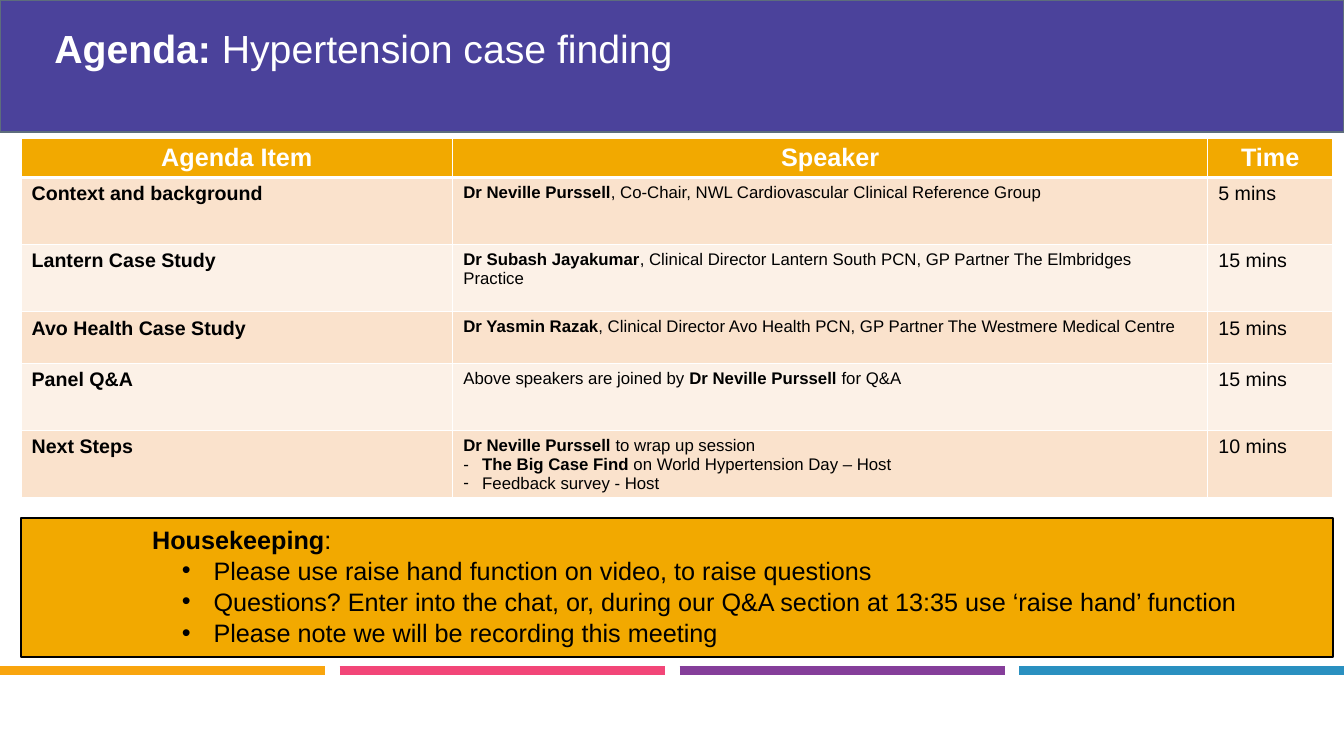
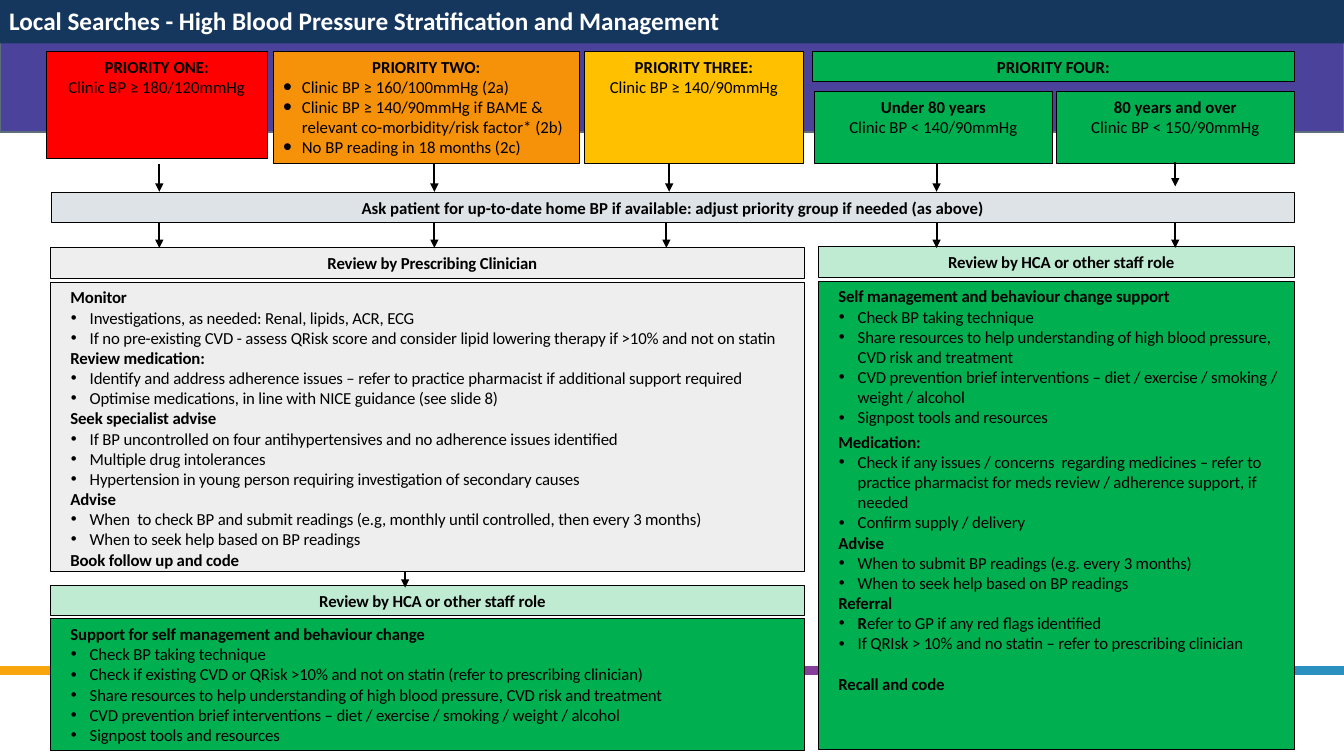
from lxml import etree
from pptx import Presentation
from pptx.dml.color import RGBColor
from pptx.enum import shapes, text
from pptx.oxml import ns
from pptx.util import Pt

C = {
    "white": "FFFFFF", "black": "000000", "purple": "4B429B", "slate": "5D6D7C",
    "navy": "15375D", "gold": "F2A900", "peach": "FAE2CC", "cream": "FCF1E7",
    "red": "FF0000", "orange": "F6910A", "amber": "FFC000", "green": "00B050",
    "steel": "7E93A7", "grey": "BFBFBF",
}
STRIPES = ["F9A50E", "F24678", "853E9A", "2A90C0"]
LEFT, CENTER = text.PP_ALIGN.LEFT, text.PP_ALIGN.CENTER


def write(tf, lines, size, font="Arial", color="black", align=LEFT, head=0,
          marker=(21, 13.5, 100), gaps={}, spacing=None, tight=False):
    """Fill a frame; text between bars is bold, "• " or "- " starts a list item."""
    tf.word_wrap = True
    tf.vertical_anchor = text.MSO_ANCHOR.TOP
    for i, line in enumerate(lines):
        p = tf.paragraphs[0] if i == 0 else tf.add_paragraph()
        pPr = p._p.get_or_add_pPr()
        item = line[:2] in ("• ", "- ")
        margin, hang, scale = marker if item else (head, 0, 100)
        pPr.set("marL", str(int(Pt(margin))))
        pPr.set("indent", str(-int(Pt(hang))))
        if item:
            etree.SubElement(pPr, ns.qn("a:buSzPct")).set("val", str(scale * 1000))
            etree.SubElement(pPr, ns.qn("a:buFont")).set("typeface", "Arial")
            etree.SubElement(pPr, ns.qn("a:buChar")).set("char", line[0])
            line = line[2:]
        else:
            etree.SubElement(pPr, ns.qn("a:buNone"))
        p.alignment = LEFT if item else align
        p.space_before = Pt(gaps.get(line.strip("|"), 0))
        if spacing:
            p.line_spacing = spacing
        for j, part in enumerate(line.split("|")):
            if not part:
                continue
            r = p.add_run()
            r.text = part
            r.font.size, r.font.name, r.font.bold = Pt(size), font, j % 2 == 1
            r.font.color.rgb = RGBColor.from_string(C[color])
            if tight:
                r._r.get_or_add_rPr().set("spc", "-10")


def paint(sp, box, fill, line=None, width=0.75, alpha=None):
    """Place a shape and set its fill and outline."""
    sp.left, sp.top, sp.width, sp.height = [Pt(v) for v in box]
    sp.fill.solid()
    sp.fill.fore_color.rgb = RGBColor.from_string(C[fill])
    if alpha:
        clr = sp._element.spPr.find(ns.qn("a:solidFill"))[0]
        etree.SubElement(clr, ns.qn("a:alpha")).set("val", str(alpha * 1000))
    if line:
        sp.line.color.rgb = RGBColor.from_string(C[line])
        sp.line.width = Pt(width)
    else:
        sp.line.fill.background()


prs = Presentation()
prs.slide_width, prs.slide_height = Pt(960), Pt(540)
agenda = prs.slides.add_slide(prs.slide_layouts[1])
pathway = prs.slides.add_slide(prs.slide_layouts[5])

# Master: purple band and four footer stripes
band = agenda.shapes.add_shape(shapes.MSO_SHAPE.RECTANGLE, 0, 0, 0, 0)
band.shadow.inherit = False
paint(band, (0, 0, 960, 94.3), "purple", "slate", 1)
decor = [band]
for i, color in enumerate(STRIPES):
    x = i * 242.7
    ln = agenda.shapes.add_connector(
        shapes.MSO_CONNECTOR.STRAIGHT, Pt(x), Pt(479), Pt(x + 232.4), Pt(479))
    ln.line.color.rgb = RGBColor.from_string(color)
    ln.line.width = Pt(6)
    etree.SubElement(ln._element.spPr, ns.qn("a:effectLst"))
    decor.append(ln)
for i, sp in enumerate(decor):
    prs.slide_master.shapes._spTree.insert(2 + i, sp._element)

# Agenda: title
title = agenda.shapes.title
title.left, title.top, title.width, title.height = Pt(31.7), Pt(17.3), Pt(896.4), Pt(49)
write(title.text_frame, ["|Agenda: |Hypertension case finding"], 28, color="white",
      spacing=0.9)
title.text_frame.auto_size = text.MSO_AUTO_SIZE.NONE

# Agenda: table
ROWS = [
    ("|Agenda Item|", ["|Speaker|"], "|Time|"),
    ("|Context and background|",
     ["|Dr Neville Purssell|, Co-Chair, NWL Cardiovascular Clinical Reference Group"],
     "5 mins"),
    ("|Lantern Case Study|",
     ["|Dr Subash Jayakumar|, Clinical Director Lantern South PCN, "
      "GP Partner The Elmbridges Practice"], "15 mins"),
    ("|Avo Health Case Study|",
     ["|Dr Yasmin Razak|, Clinical Director Avo Health PCN, "
      "GP Partner The Westmere Medical Centre"], "15 mins"),
    ("|Panel Q&A|",
     ["Above speakers are joined by |Dr Neville Purssell| for Q&A"], "15 mins"),
    ("|Next Steps|",
     ["|Dr Neville Purssell| to wrap up session",
      "- |The Big Case Find| on World Hypertension Day – Host",
      "- Feedback survey - Host"], "10 mins"),
]
HEIGHTS = [27.5, 48, 48, 37, 48, 48]
tbl = agenda.shapes.add_table(len(ROWS), 3, Pt(15), Pt(99), Pt(937), Pt(256.5)).table
for col, width in zip(tbl.columns, (308.4, 539.3, 89.3)):
    col.width = Pt(width)
for i, (row, height) in enumerate(zip(ROWS, HEIGHTS)):
    tbl.rows[i].height = Pt(height)
    for j, value in enumerate(row):
        cell = tbl.cell(i, j)
        cell.margin_left = cell.margin_right = Pt(7.6)
        cell.margin_top = cell.margin_bottom = Pt(3.8)
        lines = value if isinstance(value, list) else [value]
        if i == 0:
            write(cell.text_frame, lines, 18, color="white", align=CENTER)
        else:
            write(cell.text_frame, lines, 12 if j == 1 else 14, marker=(13.5, 13.5, 100))
        tcPr = cell._tc.get_or_add_tcPr()
        for side in "LRTB":
            heavy = (i, side) in ((0, "B"), (1, "T"))
            ln = etree.SubElement(tcPr, ns.qn("a:ln" + side))
            ln.set("w", str(int(Pt(3 if heavy else 1))))
            fill = etree.SubElement(ln, ns.qn("a:solidFill"))
            etree.SubElement(fill, ns.qn("a:srgbClr")).set("val", C["white"])
        cell.fill.solid()
        shade = "gold" if i == 0 else ("peach" if i % 2 else "cream")
        cell.fill.fore_color.rgb = RGBColor.from_string(C[shade])

# Agenda: housekeeping list
body = agenda.placeholders[1]
paint(body, (15, 370, 937, 99), "gold", "black", 1.5)
write(body.text_frame, [
    "|Housekeeping|:",
    "• Please use raise hand function on video, to raise questions",
    "• Questions? Enter into the chat, or, during our Q&A section at 13:35 "
    "use ‘raise hand’ function",
    "• Please note we will be recording this meeting",
], 18, head=86.5, marker=(130.3, 22.5, 100), spacing=1.03)
body.text_frame.auto_size = text.MSO_AUTO_SIZE.NONE

# Pathway: title bar
title = pathway.shapes.title
paint(title, (-0.7, -1.4, 960.7, 32.4), "navy")
write(title.text_frame, ["|Local Searches - High Blood Pressure Stratification and Management|"],
      18, "Calibri", "white")
title.text_frame.vertical_anchor = text.MSO_ANCHOR.MIDDLE
title.text_frame.auto_size = text.MSO_AUTO_SIZE.NONE

# Pathway: boxes as position, fill, opacity, text style and lines
PRIORITY = dict(align=CENTER, marker=(13.5, 13.5, 150))
HEADING = dict(align=CENTER, head=7.2, tight=True)
DETAIL = dict(head=7.2, tight=True, gaps={"Medication:": 3, "Recall and code": 14.6})
LX, LW, RX, RW, BAR = 36, 538.6, 584.6, 339.8, 21.6
BOXES = [
    ((33.1, 36.7, 157.7, 76.3), "red", None, PRIORITY,
     ["|PRIORITY ONE:|", "Clinic BP ≥ 180/120mmHg"]),
    ((195.1, 36.7, 218.9, 79.9), "orange", None, PRIORITY,
     ["|PRIORITY TWO:|",
      "• Clinic BP ≥ 160/100mmHg (2a)",
      "• Clinic BP ≥ 140/90mmHg if BAME & relevant co-morbidity/risk factor* (2b)",
      "• No BP reading in 18 months (2c)"]),
    ((417.6, 36.7, 156.2, 79.9), "amber", None, PRIORITY,
     ["|PRIORITY THREE:|", "Clinic BP ≥ 140/90mmHg"]),
    ((580.3, 36.7, 344.2, BAR), "green", None, PRIORITY, ["|PRIORITY FOUR:|"]),
    ((581.8, 65.5, 169.9, 51.1), "green", None, PRIORITY,
     ["|Under 80 years|", "Clinic BP < 140/90mmHg"]),
    ((754.6, 65.5, 169.9, 51.1), "green", None, PRIORITY,
     ["|80 years and over|", "Clinic BP < 150/90mmHg"]),
    ((36.7, 137.5, 888, BAR), "steel", 25, PRIORITY,
     ["|Ask patient for up-to-date home BP if available: "
      "adjust priority group if needed (as above)|"]),
    ((LX, 177.1, LW, BAR), "grey", 25, HEADING, ["|Review by Prescribing Clinician|"]),
    ((LX, 201.6, LW, 206.6), "grey", 25, DETAIL,
     ["|Monitor|",
      "• Investigations, as needed: Renal, lipids, ACR, ECG",
      "• If no pre-existing CVD - assess QRisk score and consider lipid lowering "
      "therapy if >10% and not on statin",
      "|Review medication:|",
      "• Identify and address adherence issues – refer to practice pharmacist "
      "if additional support required",
      "• Optimise medications, in line with NICE guidance (see slide 8)",
      "|Seek specialist advise|",
      "• If BP uncontrolled on four antihypertensives and no adherence issues identified",
      "• Multiple drug intolerances",
      "• Hypertension in young person requiring investigation of secondary causes",
      "|Advise|",
      "• When  to check BP and submit readings (e.g, monthly until controlled, "
      "then every 3 months)",
      "• When to seek help based on BP readings",
      "|Book follow up and code|"]),
    ((LX, 418.3, LW, BAR), "green", 25, HEADING, ["|Review by HCA or other staff role|"]),
    ((LX, 442.1, LW, 94.3), "green", None, DETAIL,
     ["|Support for self management and behaviour change|",
      "• Check BP taking technique",
      "• Check if existing CVD or QRisk >10% and not on statin "
      "(refer to prescribing clinician)",
      "• Share resources to help understanding of high blood pressure, "
      "CVD risk and treatment",
      "• CVD prevention brief interventions – diet / exercise / smoking / weight / alcohol",
      "• Signpost tools and resources"]),
    ((RX, 176.4, RW, BAR), "green", 25, HEADING, ["|Review by HCA or other staff role|"]),
    ((RX, 200.9, RW, 334.8), "green", None, DETAIL,
     ["|Self management and behaviour change support|",
      "• Check BP taking technique",
      "• Share resources to help understanding of high blood pressure, "
      "CVD risk and treatment",
      "• CVD prevention brief interventions – diet / exercise / smoking / weight / alcohol",
      "• Signpost tools and resources",
      "|Medication:|",
      "• Check if any issues / concerns  regarding medicines – refer to practice "
      "pharmacist for meds review / adherence support, if needed",
      "• Confirm supply / delivery",
      "|Advise|",
      "• When to submit BP readings (e.g. every 3 months)",
      "• When to seek help based on BP readings",
      "|Referral|",
      "• |R|efer to GP if any red flags identified",
      "• If QRIsk > 10% and no statin – refer to prescribing clinician",
      "|Recall and code|"]),
]
for box, fill, alpha, style, lines in BOXES:
    sp = pathway.shapes.add_shape(shapes.MSO_SHAPE.RECTANGLE, 0, 0, 0, 0)
    sp.shadow.inherit = False
    paint(sp, box, fill, "black", alpha=alpha)
    write(sp.text_frame, lines, 12, "Calibri", **style)

# Pathway: arrows as x, top, bottom
ARROWS = [(x, 117, 137) for x in (113.8, 310.3, 478, 669)] + [(839.5, 116, 133.2)]
ARROWS += [(x, 159.1, 177.1) for x in (113.8, 310.3, 476, 669, 839.5)]
ARROWS += [(289.4, 408.2, 419.8)]
for x, top, bottom in ARROWS:
    ln = pathway.shapes.add_connector(
        shapes.MSO_CONNECTOR.STRAIGHT, Pt(x), Pt(top), Pt(x), Pt(bottom))
    ln.line.color.rgb = RGBColor.from_string(C["black"])
    ln.line.width = Pt(1.5)
    etree.SubElement(ln.line._get_or_add_ln(), ns.qn("a:tailEnd")).set("type", "triangle")
    etree.SubElement(ln._element.spPr, ns.qn("a:effectLst"))

prs.save("out.pptx")
